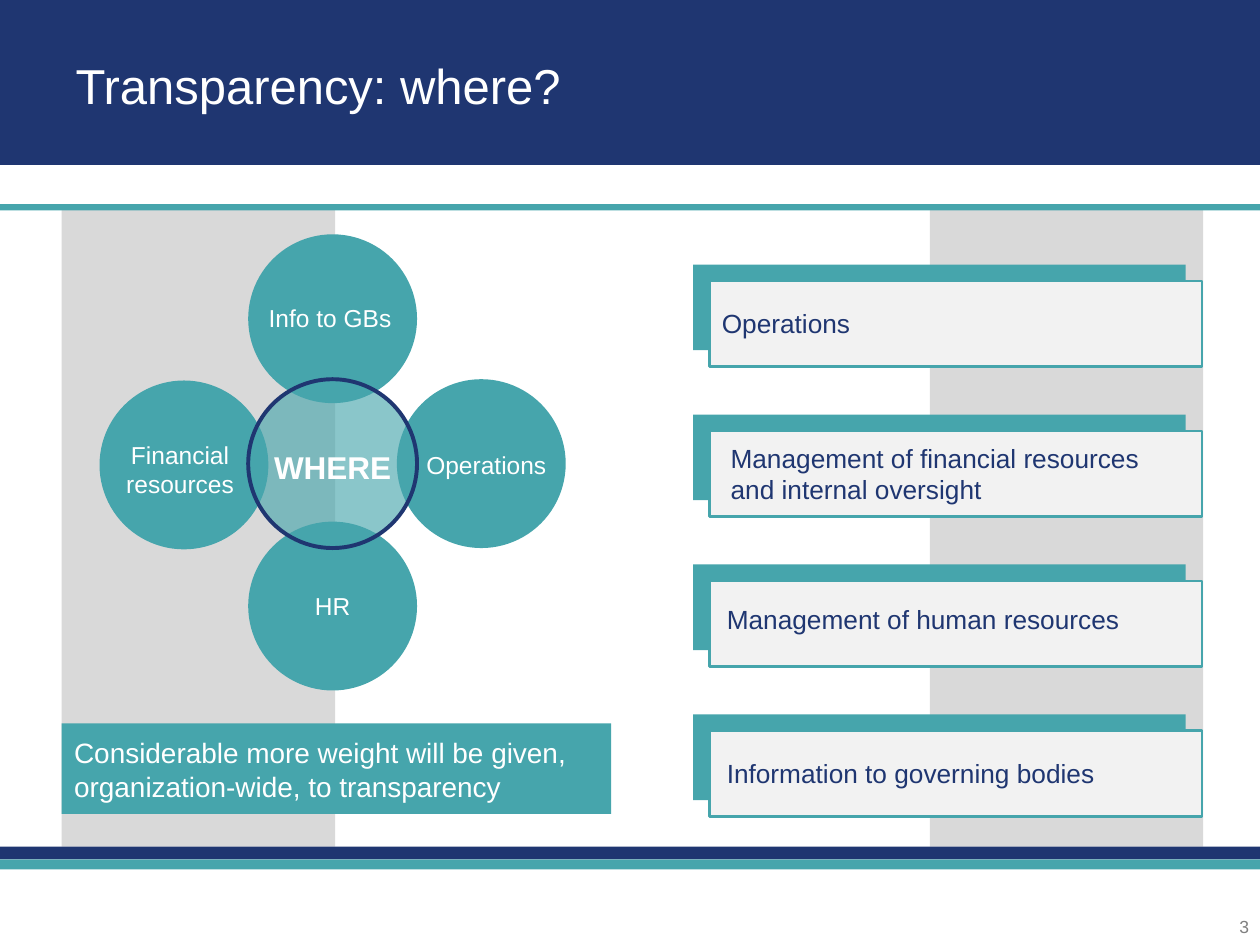
from dataclasses import dataclass

import lxml.etree
import pptx
import pptx.dml.color
import pptx.enum.shapes
import pptx.enum.text
import pptx.oxml.ns
import pptx.util

Inches = pptx.util.Inches
Pt = pptx.util.Pt
RGB = pptx.dml.color.RGBColor.from_string
Shape = pptx.enum.shapes.MSO_SHAPE
Align = pptx.enum.text.PP_ALIGN


@dataclass(frozen=True)
class Theme:
    font: str = "Arial"
    navy: str = "1F3671"
    teal: str = "46A5AC"
    gray: str = "D9D9D9"
    panel: str = "F2F2F2"
    white: str = "FFFFFF"
    muted: str = "808080"
    title: int = 28
    hub: int = 18
    banner: int = 16
    card: int = 15
    petal: int = 14
    number: int = 10


@dataclass(frozen=True)
class Box:
    left: float
    top: float
    width: float
    height: float

    def emu(self) -> tuple:
        return tuple(Inches(v) for v in (self.left, self.top, self.width, self.height))


@dataclass(frozen=True)
class Petal:
    text: str
    left: float
    top: float
    label: Box


@dataclass(frozen=True)
class Card:
    text: str
    label: Box


THEME = Theme()
DIAMETER = 1.34
CARD_TOP, CARD_PITCH, CARD_SHIFT = 2.1, 1.19, 0.13

BANDS = [
    (Box(0, 0, 10, 1.31), THEME.navy),
    (Box(7.38, 1.64, 2.17, 5.08), THEME.gray),
    (Box(0.49, 1.62, 2.17, 5.1), THEME.gray),
    (Box(0, 6.82, 10, 0.08), THEME.teal),
    (Box(0, 6.72, 10, 0.1), THEME.navy),
    (Box(0, 1.62, 10, 0.05), THEME.teal),
]
PETALS = [
    Petal("Info to GBs", 1.97, 1.86, Box(1.95, 2.36, DIAMETER, 0.34)),
    Petal("Operations", 3.15, 3.01, Box(3.19, 3.52, DIAMETER, 0.34)),
    Petal("Financial resources", 0.79, 3.02, Box(0.76, 3.44, DIAMETER, 0.57)),
    Petal("HR", 1.97, 4.14, Box(1.97, 4.64, DIAMETER, 0.34)),
]
CARDS = [
    Card("Operations", Box(5.63, 2.39, 3.92, 0.35)),
    Card("Management of financial resources and internal oversight", Box(5.7, 3.46, 3.72, 0.61)),
    Card("Management of human resources", Box(5.67, 4.74, 3.88, 0.35)),
    Card("Information to governing bodies", Box(5.67, 5.96, 3.87, 0.35)),
]


def add_block(s, box: Box, fill: str, kind=Shape.RECTANGLE, line: str = "", weight: float = 0):
    sp = s.shapes.add_shape(kind, *box.emu())
    sp.shadow.inherit = False
    sp.fill.solid()
    sp.fill.fore_color.rgb = RGB(fill)
    if line:
        sp.line.color.rgb = RGB(line)
        sp.line.width = Pt(weight)
    else:
        sp.line.fill.background()
    return sp


def add_label(s, box: Box, text: str, size: int, color: str,
              align=Align.LEFT, bold: bool = False):
    sp = s.shapes.add_textbox(*box.emu())
    tf = sp.text_frame
    tf.word_wrap = True
    p = tf.paragraphs[0]
    p.text = text
    p.alignment = align
    p.font.name = THEME.font
    p.font.size = Pt(size)
    p.font.bold = bold
    p.font.color.rgb = RGB(color)
    return sp


def set_opacity(sp, percent: int) -> None:
    qn = pptx.oxml.ns.qn
    color = sp.fill._xPr.find(qn("a:solidFill")).find(qn("a:srgbClr"))
    lxml.etree.SubElement(color, qn("a:alpha")).set("val", str(percent * 1000))


def draw_petal(s, petal: Petal) -> None:
    add_block(s, Box(petal.left, petal.top, DIAMETER, DIAMETER), THEME.teal, Shape.OVAL)
    add_label(s, petal.label, petal.text, THEME.petal, THEME.white, Align.CENTER)


def draw_hub(s) -> None:
    hub = add_block(s, Box(1.97, 3.01, DIAMETER, DIAMETER), THEME.teal, Shape.OVAL, THEME.navy, 2.25)
    set_opacity(hub, 63)
    add_label(s, Box(1.98, 3.51, 1.32, 0.4), "WHERE", THEME.hub, THEME.white, Align.CENTER, True)


def draw_card(s, card: Card, top: float) -> None:
    add_block(s, Box(5.5, top, 3.91, 0.68), THEME.teal)
    add_block(s, Box(5.5 + CARD_SHIFT, top + CARD_SHIFT, 3.91, 0.68), THEME.panel,
              line=THEME.teal, weight=1.5)
    add_label(s, card.label, card.text, THEME.card, THEME.navy)


def main() -> None:
    """Build the transparency slide and save it."""
    prs = pptx.Presentation()
    prs.slide_width, prs.slide_height = Inches(10), Inches(7.5)
    s = prs.slides.add_slide(prs.slide_layouts[6])
    for box, color in BANDS:
        add_block(s, box, color)
    title = add_label(s, Box(0.6, 0.44, 7, 0.47), "Transparency: where?", THEME.title, THEME.white)
    tf = title.text_frame
    tf.margin_left = tf.margin_right = tf.margin_top = tf.margin_bottom = 0
    add_label(s, Box(9.62, 7.22, 0.39, 0.28), "3", THEME.number, THEME.muted, Align.RIGHT)
    for petal in PETALS:
        draw_petal(s, petal)
    draw_hub(s)
    for i, card in enumerate(CARDS):
        draw_card(s, card, CARD_TOP + i * CARD_PITCH)
    add_block(s, Box(0.49, 5.74, 4.36, 0.72), THEME.teal)
    add_label(s, Box(0.49, 5.79, 4.36, 0.64),
              "Considerable more weight will be given, organization-wide, to transparency",
              THEME.banner, THEME.white)
    prs.save("out.pptx")


if __name__ == "__main__":
    main()
